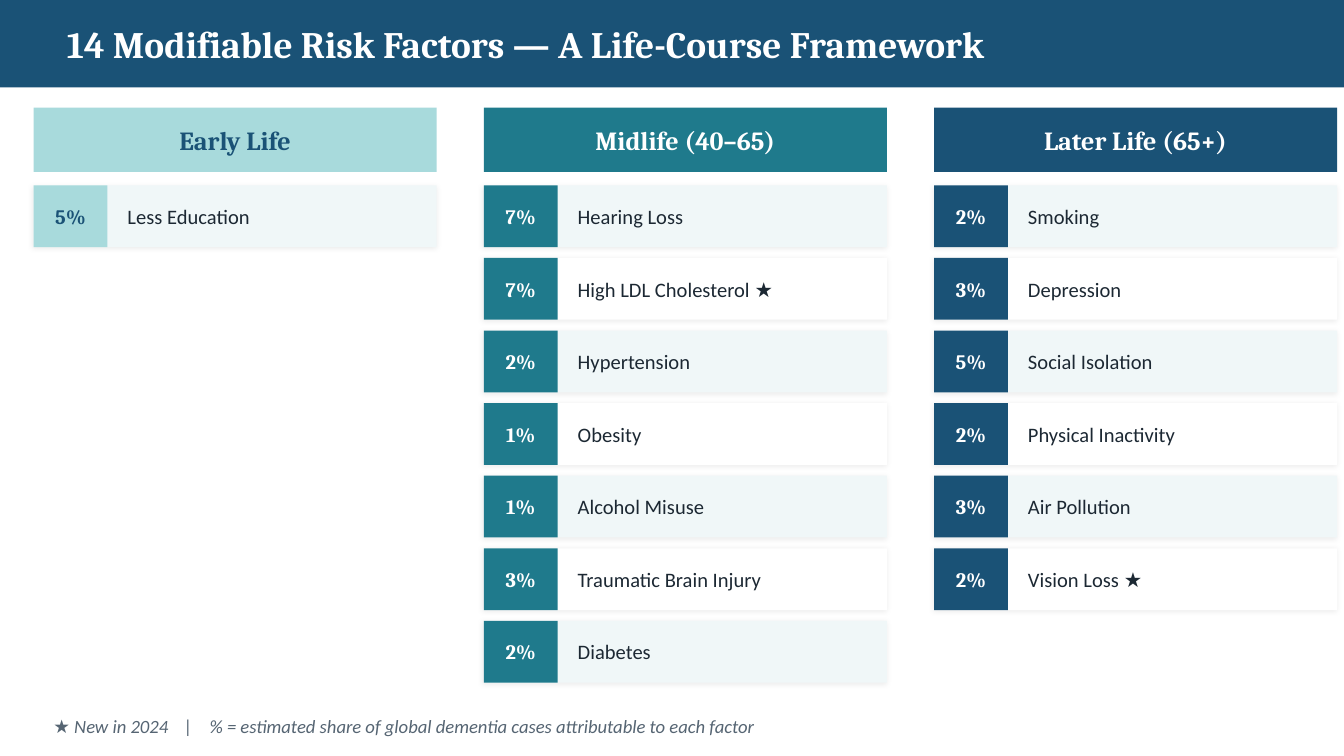
from lxml import etree
from pptx import Presentation
from pptx.dml.color import RGBColor
from pptx.enum.shapes import MSO_SHAPE
from pptx.enum.text import MSO_ANCHOR, PP_ALIGN
from pptx.oxml import parse_xml
from pptx.oxml.ns import nsdecls, qn
from pptx.util import Pt

NAVY, TEAL, AQUA = "1A5276", "1F7A8C", "A8DADC"
WHITE, PALE, INK, GREY = "FFFFFF", "F0F7F8", "1C2833", "566573"
HEAD, BODY = "Cambria", "Calibri"

COL_LEFT, COL_TOP, COL_W, COL_PITCH = 18, 57.6, 216, 241.2
HEADER_H = 34.56
ROWS_OFFSET, ROW_H, ROW_PITCH = 41.76, 33.12, 38.88
BADGE_W = 39.6

# Heading, accent colour, text colour on the accent, (share, factor) rows
STAGES = [
    ("Early Life", AQUA, NAVY, [("5%", "Less Education")]),
    ("Midlife (40–65)", TEAL, WHITE, [
        ("7%", "Hearing Loss"),
        ("7%", "High LDL Cholesterol ★"),
        ("2%", "Hypertension"),
        ("1%", "Obesity"),
        ("1%", "Alcohol Misuse"),
        ("3%", "Traumatic Brain Injury"),
        ("2%", "Diabetes"),
    ]),
    ("Later Life (65+)", NAVY, WHITE, [
        ("2%", "Smoking"),
        ("3%", "Depression"),
        ("5%", "Social Isolation"),
        ("2%", "Physical Inactivity"),
        ("3%", "Air Pollution"),
        ("2%", "Vision Loss ★"),
    ]),
]


def rgb(color):
    return RGBColor.from_string(color)


def add_rect(slide, x, y, w, h, fill):
    sp = slide.shapes.add_shape(MSO_SHAPE.RECTANGLE, Pt(x), Pt(y), Pt(w), Pt(h))
    sp.shadow.inherit = False
    sp.fill.solid()
    sp.fill.fore_color.rgb = rgb(fill)
    sp.line.fill.background()
    return sp


def add_soft_shadow(sp):
    """Give the shape a faint black shadow: 8 % opaque, 3 pt blur, 1 pt away."""
    effects = sp._element.spPr.find(qn("a:effectLst"))
    effects.append(parse_xml(
        f'<a:outerShdw {nsdecls("a")} blurRad="{Pt(3)}" dist="{Pt(1)}" '
        'dir="8100000" algn="bl" rotWithShape="0">'
        '<a:srgbClr val="000000"><a:alpha val="8000"/></a:srgbClr></a:outerShdw>'))


def add_text(slide, x, y, w, h, text, size, color, font=BODY,
             bold=False, italic=False, align=PP_ALIGN.LEFT, tabs=()):
    tf = slide.shapes.add_textbox(Pt(x), Pt(y), Pt(w), Pt(h)).text_frame
    tf.word_wrap = True
    tf.vertical_anchor = MSO_ANCHOR.MIDDLE
    p = tf.paragraphs[0]
    p.text = text
    p.alignment = align
    if tabs:
        tab_list = etree.SubElement(p._p.get_or_add_pPr(), qn("a:tabLst"))
        for pos in tabs:
            etree.SubElement(tab_list, qn("a:tab"), pos=str(Pt(pos)), algn="l")
    for r in p.runs:
        r.font.name, r.font.size = font, Pt(size)
        r.font.bold, r.font.italic = bold, italic
        r.font.color.rgb = rgb(color)


def add_title_bar(slide, x, y, w, h):
    add_rect(slide, x, y, w, h, NAVY)
    add_text(slide, x + 28.8, y + 3.6, w - 57.6, h - 7.2,
             "14 Modifiable Risk Factors — A Life-Course Framework",
             20, WHITE, HEAD, bold=True)


def add_factor_row(slide, x, y, w, h, share, factor, fill, accent, on_accent):
    add_soft_shadow(add_rect(slide, x, y, w, h, fill))
    add_rect(slide, x, y, BADGE_W, h, accent)
    add_text(slide, x, y, BADGE_W, h, share, 11, on_accent, HEAD,
             bold=True, align=PP_ALIGN.CENTER)
    add_text(slide, x + BADGE_W + 3.6, y + 4.32, w - BADGE_W - 7.2, h - 8.64,
             factor, 11, INK)


def add_stage_column(slide, x, y, w, heading, accent, on_accent, factors):
    add_rect(slide, x, y, w, HEADER_H, accent)
    add_text(slide, x, y + 3.6, w, HEADER_H - 7.2, heading, 14, on_accent, HEAD,
             bold=True, align=PP_ALIGN.CENTER)
    for i, (share, factor) in enumerate(factors):
        add_factor_row(slide, x, y + ROWS_OFFSET + i * ROW_PITCH, w, ROW_H,
                       share, factor, WHITE if i % 2 else PALE, accent, on_accent)


def add_footnote(slide, x, y, w, h):
    add_text(slide, x, y, w, h,
             "★ New in 2024\t|\t% = estimated share of global dementia cases "
             "attributable to each factor",
             10, GREY, italic=True, tabs=(70, 83.6))


def main():
    prs = Presentation()
    prs.slide_width, prs.slide_height = Pt(720), Pt(405)
    slide = prs.slides.add_slide(prs.slide_layouts[6])
    add_title_bar(slide, 0, 0, 720, 46.8)
    for i, stage in enumerate(STAGES):
        add_stage_column(slide, COL_LEFT + i * COL_PITCH, COL_TOP, COL_W, *stage)
    add_footnote(slide, 21.6, 378, 676.8, 21.6)
    prs.save("out.pptx")


if __name__ == "__main__":
    main()
